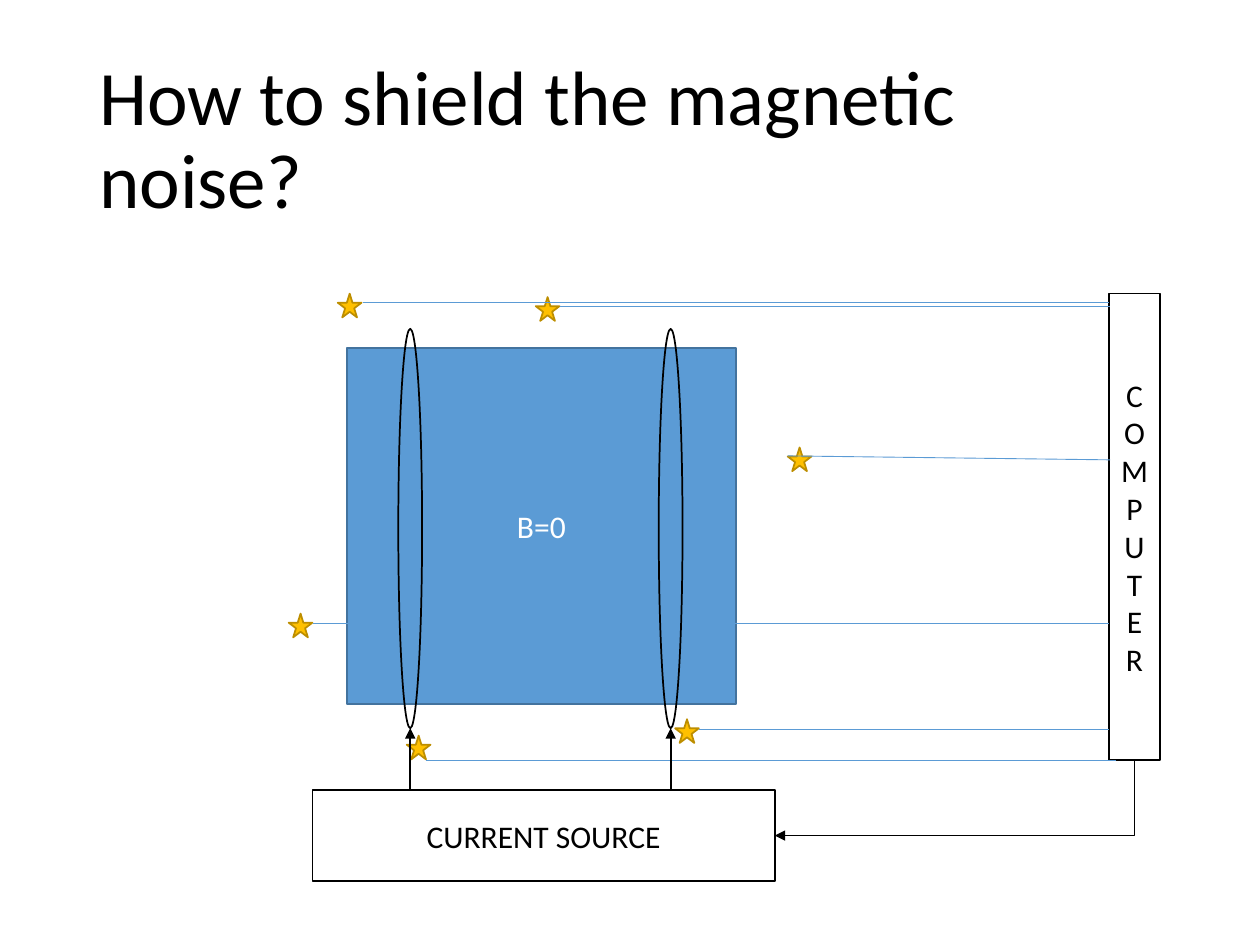
from lxml import etree
from pptx import Presentation, util as u
from pptx.dml.color import RGBColor
from pptx.enum import shapes, text
from pptx.oxml.ns import qn

BLACK, WHITE, BLUE = "000000", "FFFFFF", "5B9BD5"


def colour(value):
    return RGBColor.from_string(value)


class Diagram:
    """Draws styled elements on the current slide, with lengths in centimetres."""

    font = "Calibri"

    def __init__(self, slide):
        self.slide = slide

    def label(self, shape, words, size, ink, alignment):
        frame = shape.text_frame
        frame.word_wrap = True
        frame.vertical_anchor = text.MSO_ANCHOR.MIDDLE
        paragraph = frame.paragraphs[0]
        paragraph.text = words
        paragraph.alignment = alignment
        paragraph.font.name = self.font
        paragraph.font.size = u.Pt(size)
        paragraph.font.color.rgb = colour(ink)
        return paragraph

    def title(self, words, *box):
        shape = self.slide.shapes.add_textbox(*map(u.Cm, box))
        paragraph = self.label(shape, words, 44, BLACK, text.PP_ALIGN.LEFT)
        paragraph.line_spacing = 0.9

    def shape(self, kind, box, fill, line):
        shape = self.slide.shapes.add_shape(kind, *map(u.Cm, box))
        shape.shadow.inherit = False
        if fill:
            shape.fill.solid()
            shape.fill.fore_color.rgb = colour(fill)
        else:
            shape.fill.background()
        shape.line.color.rgb = colour(line)
        shape.line.width = u.Pt(1)
        return shape

    def box(self, words, box, fill=WHITE, line=BLACK, ink=BLACK):
        shape = self.shape(shapes.MSO_SHAPE.RECTANGLE, box, fill, line)
        self.label(shape, words, 18, ink, text.PP_ALIGN.CENTER)
        return shape

    def sensor(self, left, top):
        self.shape(shapes.MSO_SHAPE.STAR_5_POINT, (left, top, 0.48, 0.48), "FFC000", "BD8E00")

    def coil(self, left, top, width, height):
        self.shape(shapes.MSO_SHAPE.OVAL, (left, top, width, height), None, BLACK)

    def line(self, start, end, ink=BLUE, width=0.5, kind=shapes.MSO_CONNECTOR.STRAIGHT):
        connector = self.slide.shapes.add_connector(kind, *map(u.Cm, start + end))
        connector.line.color.rgb = colour(ink)
        connector.line.width = u.Pt(width)
        etree.SubElement(connector._element.spPr, qn("a:effectLst"))
        return connector

    def arrow(self, tip, end, width=1, kind=shapes.MSO_CONNECTOR.STRAIGHT):
        connector = self.line(tip, end, BLACK, width, kind)
        outline = connector._element.spPr.find(qn("a:ln"))
        etree.SubElement(outline, qn("a:headEnd"), type="triangle")
        return connector

    def corner_arrow(self, target, target_side, origin, origin_side):
        connector = self.arrow((0, 0), (1, 1), 0.5, shapes.MSO_CONNECTOR.ELBOW)
        connector.begin_connect(target, target_side)
        connector.end_connect(origin, origin_side)
        connector._element.spPr.find(qn("a:prstGeom")).set("prst", "bentConnector2")


def main():
    presentation = Presentation()
    presentation.slide_width, presentation.slide_height = u.Cm(25.4), u.Cm(19.05)
    diagram = Diagram(presentation.slides.add_slide(presentation.slide_layouts[6]))

    diagram.title("How to shield the magnetic noise?", 1.75, 1.02, 21.89, 3.68)
    diagram.box("B=0", (6.99, 7.01, 7.85, 7.19), BLUE, "43739E", WHITE)
    for position in ((6.81, 5.92), (10.8, 5.99), (15.88, 9.02),
                     (5.82, 12.37), (8.2, 14.83), (13.61, 14.5)):
        diagram.sensor(*position)
    computer = diagram.box("COMPUTER", (22.35, 5.92, 1.04, 9.4))
    for start, end in (((11.28, 6.17), (22.38, 6.17)), ((15.88, 9.19), (22.38, 9.27)),
                       ((14.1, 14.71), (22.35, 14.71)), ((6.3, 12.57), (22.35, 12.57)),
                       ((7.32, 6.1), (22.35, 6.1)), ((8.59, 15.32), (22.5, 15.32))):
        diagram.line(start, end)

    source_top = 15.93
    source = diagram.box("CURRENT SOURCE", (6.3, source_top, 9.32, 1.83))
    diagram.corner_arrow(source, 3, computer, 2)
    coil_top, coil_width, coil_height = 6.63, 0.48, 8.05
    for left in (8.03, 13.28):
        diagram.coil(left, coil_top, coil_width, coil_height)
        centre = left + coil_width / 2
        diagram.arrow((centre, coil_top + coil_height), (centre, source_top))

    presentation.save("out.pptx")


if __name__ == "__main__":
    main()
